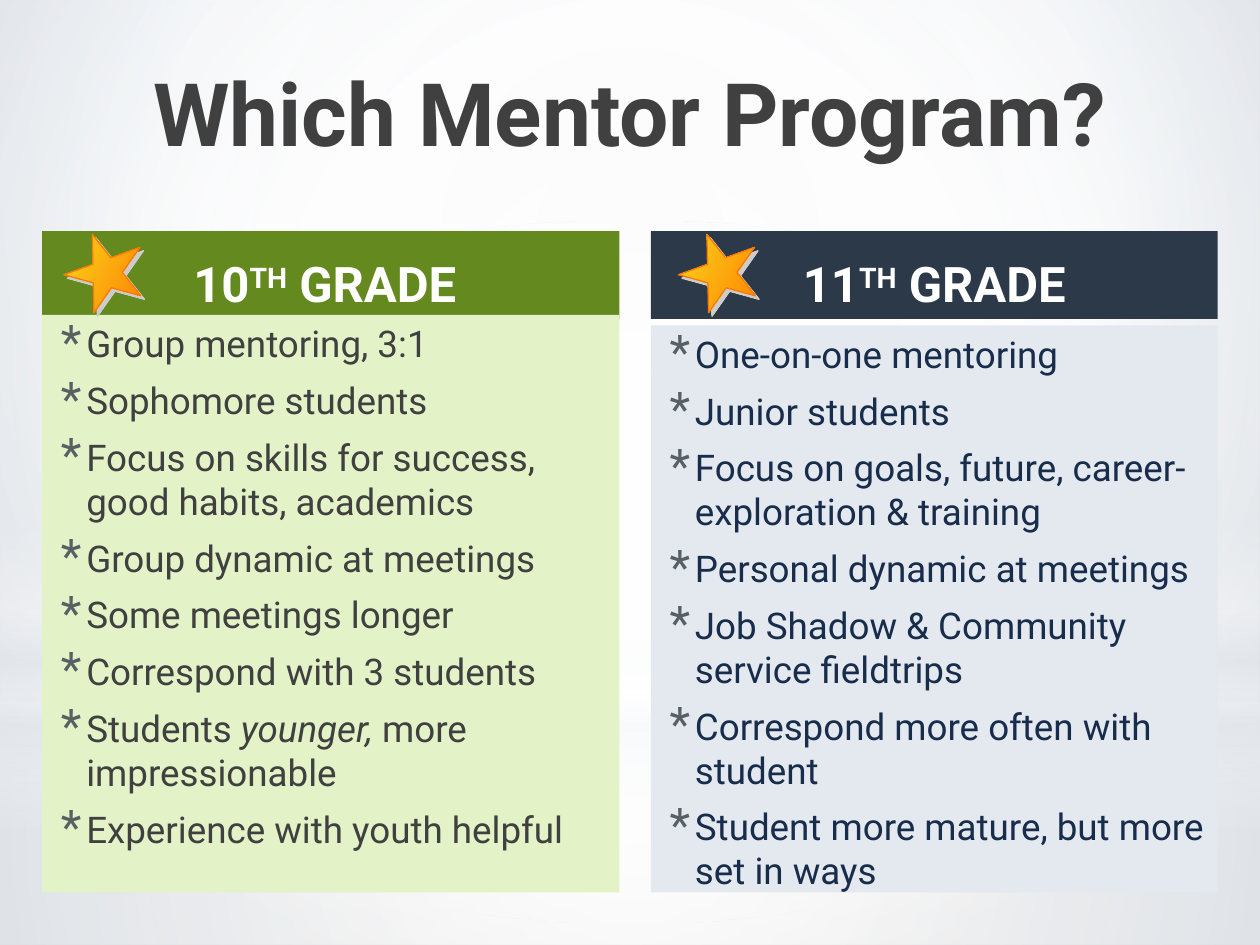
from lxml import etree
from pptx import Presentation
from pptx import util as u
from pptx.dml.color import RGBColor
from pptx.enum import shapes, text
from pptx.oxml import parse_xml
from pptx.oxml.ns import qn, nsdecls

THEME = {
    "font": "Roboto",
    "title": ("404040", 50),
    "heading": ("FFFFFF", 28),
    "body_size": 21,
    "bullet": "586064",
    "star": [(0, "F9E11E", 100), (100, "FF7900", 100)],
    "star_line": "FF7900",
    "star_shadow": "CCCCCC",
    "background": [(0, "F4F4F4", 100), (60, "FFFFFF", 100), (100, "CCCCCC", 100)],
}
CENTER = (50, 50, 50, 50)
SLIDE_SIZE = (25.4, 19.05)
TITLE = "Which Mentor Program?"
TITLE_BOX = (0.42, 1.06, 24.56, 2.86)

BACKDROP = [
    ("RECTANGLE", (0, 14.17, 25.4, 4.88), CENTER,
     [(0, "FFFFFF", 91), (37, "FFFFFF", 76), (100, "E4E9EF", 79)]),
    ("RECTANGLE", (0, 0, 25.4, 14.17), CENTER,
     [(0, "FFFFFF", 89), (48, "FFFFFF", 62), (100, "E4E9EF", 79)]),
    ("RECTANGLE", (0, 10.46, 25.4, 6.35), 90,
     [(0, "FFFFFF", 0), (29, "FFFFFF", 30), (45, "E4E9EF", 40),
      (55, "FFFFFF", 26), (65, "E4E9EF", 60), (100, "FFFFFF", 0)]),
    ("OVAL", (0, 4.45, 25.4, 14.17), CENTER,
     [(0, "FFFFFF", 100), (56, "FFFFFF", 0)]),
]

HEADING_TOP, HEADING_HEIGHT, BODY_BOTTOM = 4.66, 1.77, 17.99
STAR_TOP, STAR_SIZE, STAR_ROTATION = 4.68, (1.63, 1.5), 340.2
COLUMNS = [
    {
        "left": 0.85, "width": 11.64, "body_top": 6.35, "star_left": 1.3,
        "heading": ("10", "TH", " GRADE "),
        "heading_fill": "63891F", "body_fill": "E3F2C7", "text": "404040",
        "items": [
            ["Group mentoring, 3:1"],
            ["Sophomore students"],
            ["Focus on skills for success, good habits, academics"],
            ["Group dynamic at meetings"],
            ["Some meetings longer"],
            ["Correspond with 3 students"],
            ["Students ", "younger,", " more impressionable"],
            ["Experience with youth helpful"],
        ],
    },
    {
        "left": 13.12, "width": 11.43, "body_top": 6.56, "star_left": 13.69,
        "heading": (" 11", "TH", " GRADE "),
        "heading_fill": "2B3949", "body_fill": "E4E9EF", "text": "182C4B",
        "items": [
            ["One-on-one mentoring"],
            ["Junior students"],
            ["Focus on goals, future, career-exploration & training"],
            ["Personal dynamic at meetings"],
            ["Job Shadow & Community service fieldtrips"],
            ["Correspond more often with student"],
            ["Student more mature, but more set in ways"],
        ],
    },
]


def gradient_xml(stops, direction):
    stop_list = "".join(
        f'<a:gs pos="{position * 1000}"><a:srgbClr val="{color}">'
        f'<a:alpha val="{alpha * 1000}"/></a:srgbClr></a:gs>'
        for position, color, alpha in stops)
    if isinstance(direction, tuple):
        left, top, right, bottom = (side * 1000 for side in direction)
        shade = (f'<a:path path="circle"><a:fillToRect l="{left}" t="{top}" '
                 f'r="{right}" b="{bottom}"/></a:path>')
    else:
        shade = f'<a:lin ang="{direction * 60000}" scaled="0"/>'
    return (f'<a:gradFill {nsdecls("a")} rotWithShape="1">'
            f'<a:gsLst>{stop_list}</a:gsLst>{shade}</a:gradFill>')


def add_shape(slide, kind, box):
    shape = slide.shapes.add_shape(
        getattr(shapes.MSO_SHAPE, kind), *(u.Cm(length) for length in box))
    shape.shadow.inherit = False
    shape.line.fill.background()
    return shape


def add_panel(slide, box, color, anchor):
    shape = add_shape(slide, "RECTANGLE", box)
    shape.fill.solid()
    shape.fill.fore_color.rgb = RGBColor.from_string(color)
    shape.text_frame.word_wrap = True
    shape.text_frame.vertical_anchor = anchor
    return shape.text_frame


def fill_gradient(shape, stops, direction):
    shape.fill.background()
    empty_fill = shape._element.spPr.find(qn("a:noFill"))
    empty_fill.getparent().replace(
        empty_fill, parse_xml(gradient_xml(stops, direction)))


def add_run(paragraph, words, color, size, bold=False, italic=False):
    run = paragraph.add_run()
    run.text = words
    run.font.name = THEME["font"]
    run.font.size = u.Pt(size)
    run.font.color.rgb = RGBColor.from_string(color)
    run.font.bold = bold
    run.font.italic = italic
    return run


def set_bullet(paragraph):
    properties = paragraph._p.get_or_add_pPr()
    properties.set("marL", str(u.Cm(0.64)))
    properties.set("indent", str(u.Cm(-0.51)))
    color = etree.SubElement(properties, qn("a:buClr"))
    etree.SubElement(color, qn("a:srgbClr"), val=THEME["bullet"])
    etree.SubElement(properties, qn("a:buSzPct"), val="130000")
    etree.SubElement(properties, qn("a:buFont"), typeface=THEME["font"])
    etree.SubElement(properties, qn("a:buChar"), char="*")


def add_heading(slide, column):
    box = (column["left"], HEADING_TOP, column["width"], HEADING_HEIGHT)
    frame = add_panel(slide, box, column["heading_fill"], text.MSO_ANCHOR.BOTTOM)
    paragraph = frame.paragraphs[0]
    paragraph.alignment = text.PP_ALIGN.CENTER
    for words in column["heading"]:
        run = add_run(paragraph, words, *THEME["heading"], bold=True)
        if words == "TH":
            run._r.get_or_add_rPr().set("baseline", "30000")


def add_body(slide, column):
    top = column["body_top"]
    box = (column["left"], top, column["width"], BODY_BOTTOM - top)
    frame = add_panel(slide, box, column["body_fill"], text.MSO_ANCHOR.TOP)
    for index, item in enumerate(column["items"]):
        paragraph = frame.add_paragraph() if index else frame.paragraphs[0]
        paragraph.alignment = text.PP_ALIGN.LEFT
        paragraph.space_before = u.Pt(4.2 if index else 0)
        paragraph.space_after = u.Pt(3)
        set_bullet(paragraph)
        for position, words in enumerate(item):
            add_run(paragraph, words, column["text"], THEME["body_size"],
                    italic=position == 1)


def add_star(slide, left):
    star = add_shape(slide, "STAR_5_POINT", (left, STAR_TOP, *STAR_SIZE))
    star.rotation = STAR_ROTATION
    fill_gradient(star, THEME["star"], 45)
    star.line.color.rgb = RGBColor.from_string(THEME["star_line"])
    star.line.width = u.Pt(0.75)
    effects = star._element.spPr.find(qn("a:effectLst"))
    shadow = etree.SubElement(
        effects, qn("a:outerShdw"), blurRad="0", dist=str(u.Pt(2.8)),
        dir=str(45 * 60000), algn="ctr", rotWithShape="0")
    etree.SubElement(shadow, qn("a:srgbClr"), val=THEME["star_shadow"])


def add_title(slide):
    box = slide.shapes.add_textbox(*(u.Cm(length) for length in TITLE_BOX))
    box.text_frame.word_wrap = True
    paragraph = box.text_frame.paragraphs[0]
    paragraph.alignment = text.PP_ALIGN.CENTER
    add_run(paragraph, TITLE, *THEME["title"], bold=True)


def main():
    presentation = Presentation()
    presentation.slide_width, presentation.slide_height = map(u.Cm, SLIDE_SIZE)
    slide = presentation.slides.add_slide(presentation.slide_layouts[6])
    slide.background.fill.solid()
    solid_fill = slide._element.find(".//" + qn("p:bgPr")).find(qn("a:solidFill"))
    solid_fill.getparent().replace(
        solid_fill, parse_xml(gradient_xml(THEME["background"], (20, 10, 20, 60))))
    for kind, box, direction, stops in BACKDROP:
        fill_gradient(add_shape(slide, kind, box), stops, direction)
    for column in COLUMNS:
        add_heading(slide, column)
        add_body(slide, column)
        add_star(slide, column["star_left"])
    add_title(slide)
    presentation.save("out.pptx")


if __name__ == "__main__":
    main()
